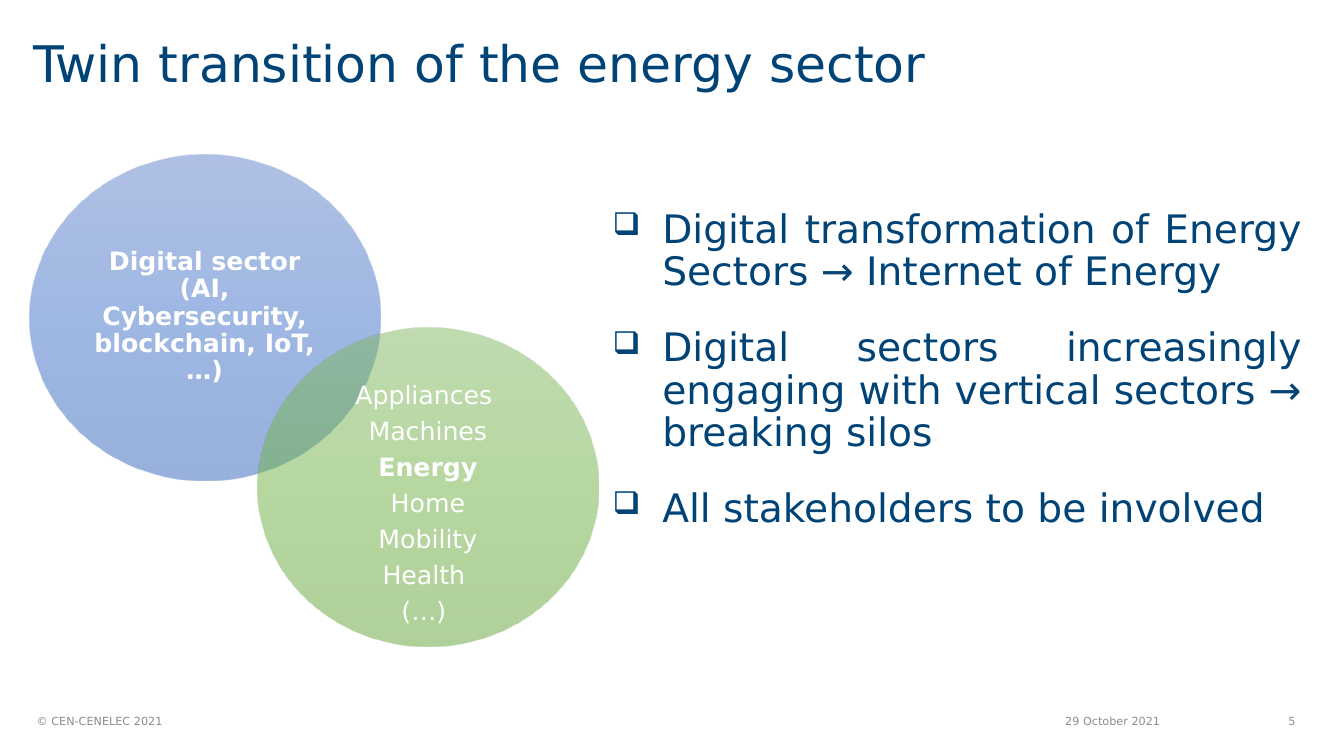
from dataclasses import dataclass

from lxml.etree import SubElement
from pptx import Presentation
from pptx.dml.color import RGBColor
from pptx.enum.shapes import MSO_SHAPE
from pptx.enum.text import MSO_ANCHOR, MSO_AUTO_SIZE, PP_ALIGN
from pptx.oxml.ns import qn
from pptx.util import Pt


@dataclass(frozen=True)
class Theme:
    face: str = "DejaVu Sans"
    navy: str = "004377"
    gray: str = "8C8C8C"
    white: str = "FFFFFF"
    blues: tuple = ("6183CB", "3E70CA", "3062BB")
    greens: tuple = ("81B861", "6FB242", "62A336")
    head: float = 36
    body: float = 28
    label: float = 18
    foot: float = 8


THEME = Theme()


def place(shape, box):
    shape.left, shape.top, shape.width, shape.height = map(Pt, box)


def style(para, size, color, bold=False, align=PP_ALIGN.LEFT):
    para.alignment = align
    font = para.font
    font.name, font.size, font.bold = THEME.face, Pt(size), bold
    font.color.rgb = RGBColor.from_string(color)


def add_text(shapes, box, lines, anchor=MSO_ANCHOR.MIDDLE, inset=None):
    frame = shapes.add_textbox(*map(Pt, box)).text_frame
    frame.word_wrap = True
    frame.auto_size = MSO_AUTO_SIZE.NONE
    frame.vertical_anchor = anchor
    if inset is not None:
        frame.margin_left = frame.margin_right = Pt(inset)
        frame.margin_top = frame.margin_bottom = Pt(inset)
    frame.text = "\n".join(lines)
    return frame.paragraphs


def add_title(slide, text):
    title = slide.shapes.title
    place(title, (16.6, 17.3, 719.3, 60.5))
    frame = title.text_frame
    frame.text = text
    frame.auto_size = MSO_AUTO_SIZE.NONE
    frame.vertical_anchor = MSO_ANCHOR.MIDDLE
    para = frame.paragraphs[0]
    para.line_spacing = 0.9
    style(para, THEME.head, THEME.navy)


def add_circle(shapes, box, colors):
    disc = shapes.add_shape(MSO_SHAPE.OVAL, *map(Pt, box))
    disc.shadow.inherit = False
    disc.line.fill.background()
    disc.fill.gradient()
    disc.fill.gradient_angle = 270
    stops = disc.element.spPr.find(qn("a:gradFill")).find(qn("a:gsLst"))
    for stop in list(stops):
        stops.remove(stop)
    for rank, color in enumerate(colors):
        stop = SubElement(stops, qn("a:gs"), pos=str(rank * 50000))
        tint = SubElement(stop, qn("a:srgbClr"), val=color)
        SubElement(tint, qn("a:alpha"), val="50000")


def add_label(shapes, box, lines, strong):
    for para in add_text(shapes, box, lines, inset=5):
        para.line_spacing = 0.9
        para.space_after = Pt(6.3)
        style(para, THEME.label, THEME.white, para.text == strong, PP_ALIGN.CENTER)


def add_points(shapes, box, lines):
    for rank, para in enumerate(add_text(shapes, box, lines, MSO_ANCHOR.TOP)):
        props = para._p.get_or_add_pPr()
        props.set("marL", str(Pt(35.4)))
        props.set("indent", str(-Pt(35.4)))
        SubElement(props, qn("a:buSzPct"), val="80000")
        SubElement(props, qn("a:buChar"), char="❑")
        para.line_spacing = 0.9
        para.space_before = Pt(12 if rank else 0)
        para.space_after = Pt(12)
        style(para, THEME.body, THEME.navy, align=PP_ALIGN.JUSTIFY)


def add_foot(shapes, left, width, text, align=PP_ALIGN.LEFT):
    para = add_text(shapes, (left, 500.4, width, 28.8), [text])[0]
    style(para, THEME.foot, THEME.gray, align=align)


def main():
    deck = Presentation()
    deck.slide_width, deck.slide_height = Pt(960), Pt(540)
    slide = deck.slides.add_slide(deck.slide_layouts[5])
    shapes = slide.shapes

    add_foot(shapes, 19, 121, "© CEN-CENELEC 2021")
    add_title(slide, "Twin transition of the energy sector")
    add_points(shapes, (430.6, 146.2, 506.2, 257.8), [
        "Digital transformation of Energy Sectors → Internet of Energy",
        "Digital sectors increasingly engaging with vertical sectors → breaking silos",
        "All stakeholders to be involved",
    ])
    add_foot(shapes, 753.8, 106.6, "29 October 2021")
    add_foot(shapes, 868.3, 64.1, "5", PP_ALIGN.RIGHT)

    venn = shapes.add_group_shape().shapes
    digital = "Digital sector (AI, Cybersecurity, blockchain, IoT, …)"
    add_circle(venn, (20.9, 110.2, 250.6, 233.3), THEME.blues)
    add_label(venn, (57.6, 144, 177.1, 164.9), [digital], digital)
    add_circle(venn, (183.6, 234, 244.1, 227.5), THEME.greens)
    sectors = ["Appliances ", "Machines", "Energy", "Home", "Mobility", "Health ", "(…) "]
    add_label(venn, (219.6, 280, 172.1, 160.6), sectors, "Energy")

    deck.save("out.pptx")


if __name__ == "__main__":
    main()
